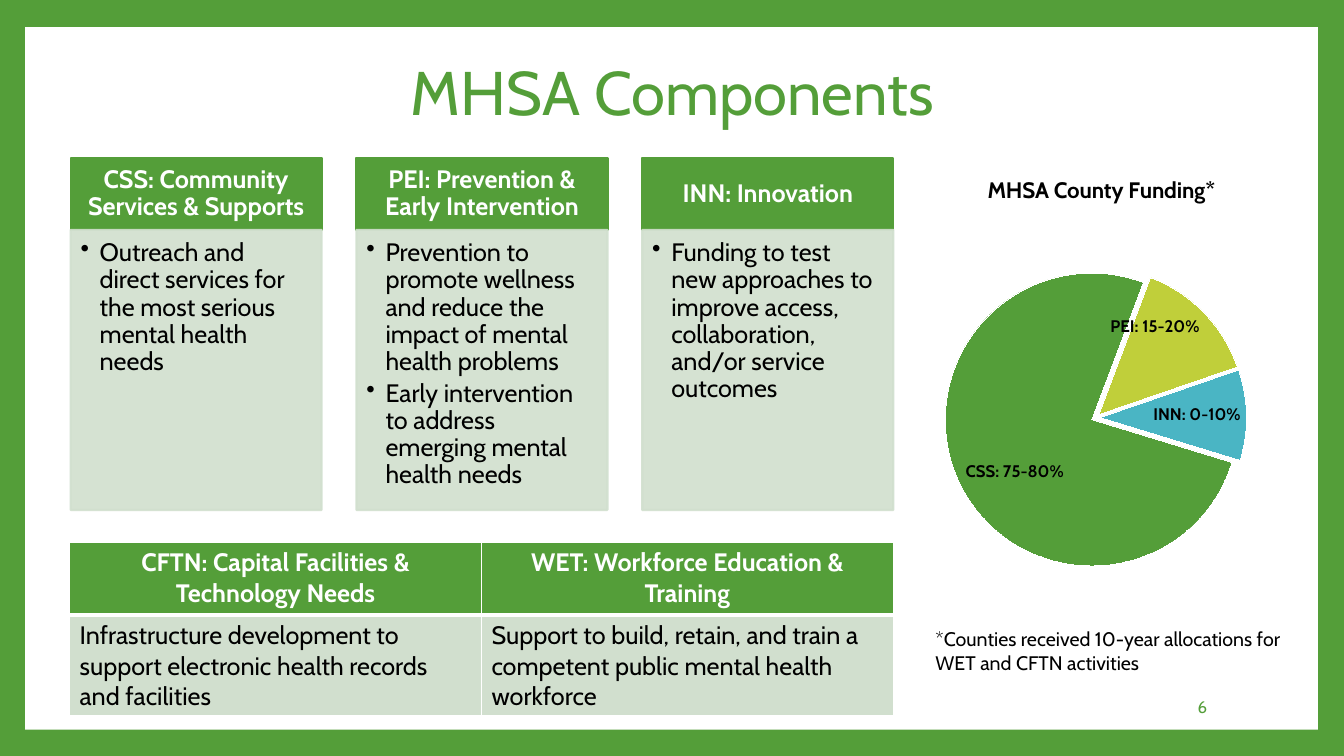
from dataclasses import dataclass

from lxml.etree import SubElement
from pptx import Presentation
from pptx.chart.data import CategoryChartData
from pptx.dml.color import RGBColor
from pptx.enum.chart import XL_CHART_TYPE, XL_LABEL_POSITION
from pptx.enum.shapes import MSO_SHAPE
from pptx.enum.text import MSO_ANCHOR, PP_ALIGN
from pptx.oxml import parse_xml
from pptx.oxml.ns import nsdecls, qn
from pptx.util import Inches, Pt


@dataclass(frozen=True)
class Theme:
    font: str = "Cabin"
    green: str = "549E39"
    pale: str = "D1DFCE"
    lime: str = "C0CF3A"
    teal: str = "4AB5C4"
    white: str = "FFFFFF"
    black: str = "000000"
    head: int = 44
    body: int = 18
    title: int = 16
    note: int = 14
    label: int = 12


THEME = Theme()
PADS = ("margin_left", "margin_top", "margin_right", "margin_bottom")
CARDS = [
    ("CSS: Community Services & Supports",
     ["Outreach and direct services for the most serious mental health needs"]),
    ("PEI: Prevention & Early Intervention",
     ["Prevention to promote wellness and reduce the impact of mental health problems",
      "Early intervention to address emerging mental health needs"]),
    ("INN: Innovation",
     ["Funding to test new approaches to improve access, collaboration, "
      "and/or service outcomes"]),
]
ROWS = [
    ["CFTN: Capital Facilities & Technology Needs",
     "WET: Workforce Education & Training"],
    ["Infrastructure development to support electronic health records and facilities",
     "Support to build, retain, and train a competent public mental health workforce"],
]
SHARES = [
    ("CSS: 75-80%", 76, THEME.green),
    ("PEI: 15-20%", 14, THEME.lime),
    ("INN: 0-10%", 10, THEME.teal),
]


def apply(item, **form):
    for key, value in form.items():
        setattr(item, key, value)


def paint(fill, color):
    fill.solid()
    fill.fore_color.rgb = RGBColor.from_string(color)


def style(font, size, color, bold=False):
    apply(font, name=THEME.font, size=Pt(size), bold=bold)
    font.color.rgb = RGBColor.from_string(color)


def write(frame, lines, size, color, bold=False, **form):
    frame.word_wrap = True
    for i, line in enumerate(lines):
        para = frame.paragraphs[0] if i == 0 else frame.add_paragraph()
        run = para.add_run()
        run.text = line
        apply(para, **form)
        style(run.font, size, color, bold)


def pad(frame, *sides):
    apply(frame, **{key: Inches(side) for key, side in zip(PADS, sides)})


def add_text(slide, area, text, size, color, anchor=MSO_ANCHOR.TOP, **form):
    box = slide.shapes.add_textbox(*map(Inches, area))
    box.text_frame.vertical_anchor = anchor
    write(box.text_frame, [text], size, color, **form)


def add_box(slide, area, color, edge=True):
    box = slide.shapes.add_shape(MSO_SHAPE.RECTANGLE, *map(Inches, area))
    box.shadow.inherit = False
    paint(box.fill, color)
    if edge:
        paint(box.line.fill, color)
        box.line.width = Pt(1.5)
    else:
        box.line.fill.background()
    return box


def add_card(slide, left, name, points):
    head = add_box(slide, (left, 1.57, 2.49, 0.71), THEME.green).text_frame
    head.vertical_anchor = MSO_ANCHOR.MIDDLE
    pad(head, 0.14, 0.08, 0.14, 0.08)
    write(head, [name], THEME.body, THEME.white, True,
          alignment=PP_ALIGN.CENTER, line_spacing=0.9)

    box = add_box(slide, (left, 2.28, 2.49, 2.78), THEME.pale)
    for tint in box._element.spPr.iter(qn("a:srgbClr")):
        SubElement(tint, qn("a:alpha"), val="90000")
    body = box.text_frame
    body.vertical_anchor = MSO_ANCHOR.TOP
    pad(body, 0.1, 0.1, 0.14, 0.16)
    write(body, points, THEME.body, THEME.black,
          alignment=PP_ALIGN.LEFT, line_spacing=0.9, space_after=Pt(3))
    for para in body.paragraphs:
        props = para._p.get_or_add_pPr()
        props.set("marL", str(Inches(0.19)))
        props.set("indent", str(-Inches(0.19)))
        SubElement(props, qn("a:buChar"), char="•")


def add_edges(cell, base):
    props = cell._tc.get_or_add_tcPr()
    for i, side in enumerate(("lnL", "lnR", "lnT", "lnB")):
        width = Pt(base if side == "lnB" else 1)
        props.insert(i, parse_xml(
            f'<a:{side} {nsdecls("a")} w="{width}"><a:solidFill>'
            f'<a:srgbClr val="{THEME.white}"/></a:solidFill></a:{side}>'))


def add_grid(slide):
    area = map(Inches, (0.69, 5.38, 8.17, 1.72))
    table = slide.shapes.add_table(len(ROWS), len(ROWS[0]), *area).table
    looks = [
        (0.72, THEME.green, THEME.white, True, PP_ALIGN.CENTER, 3),
        (1.0, THEME.pale, THEME.black, False, PP_ALIGN.LEFT, 1),
    ]
    for r, (texts, look) in enumerate(zip(ROWS, looks)):
        height, fill, color, bold, align, base = look
        table.rows[r].height = Inches(height)
        for c, text in enumerate(texts):
            cell = table.cell(r, c)
            paint(cell.fill, fill)
            write(cell.text_frame, [text], THEME.body, color, bold, alignment=align)
            add_edges(cell, base)


def set_plot(chart, left, top, width, height):
    area = chart._chartSpace.chart.plotArea
    for old in area.findall(qn("c:layout")):
        area.remove(old)
    frame = SubElement(area, qn("c:layout"))
    area.insert(0, frame)
    frame = SubElement(frame, qn("c:manualLayout"))
    for key, value in (("layoutTarget", "inner"), ("xMode", "edge"), ("yMode", "edge"),
                       ("x", left), ("y", top), ("w", width), ("h", height)):
        SubElement(frame, qn(f"c:{key}"), val=str(value))


def add_pie(slide):
    data = CategoryChartData()
    data.categories = [name for name, _, _ in SHARES]
    data.add_series("Series 1", [value for _, value, _ in SHARES])
    area = map(Inches, (9.03, 1.55, 3.79, 4.76))
    chart = slide.shapes.add_chart(XL_CHART_TYPE.PIE, *area, data).chart
    chart.has_legend = False
    style(chart.font, THEME.label, THEME.black)
    write(chart.chart_title.text_frame, ["MHSA County Funding*"],
          THEME.title, THEME.black, True)

    plot = chart.plots[0]
    apply(plot, vary_by_categories=True, has_data_labels=True)
    labels = plot.data_labels
    apply(labels, show_category_name=True, show_percentage=False,
          show_value=False, position=XL_LABEL_POSITION.INSIDE_END)
    style(labels.font, THEME.label, THEME.black, True)

    series = plot.series[0]
    for i, (_, _, color) in enumerate(SHARES):
        part = series.points[i].format
        paint(part.fill, color)
        paint(part.line.fill, THEME.white)
    burst = SubElement(series._element, qn("c:explosion"), val="3")
    series._element.find(qn("c:tx")).addnext(burst)
    pie = chart._chartSpace.chart.plotArea.find(qn("c:pieChart"))
    for old in pie.findall(qn("c:firstSliceAng")):
        pie.remove(old)
    SubElement(pie, qn("c:firstSliceAng"), val="107")
    set_plot(chart, 0.09, 0.23, 0.79, 0.63)


def main():
    deck = Presentation()
    apply(deck, slide_width=Inches(13.33), slide_height=Inches(7.5))
    slide = deck.slides.add_slide(deck.slide_layouts[6])
    paint(slide.background.fill, THEME.green)
    add_box(slide, (0.25, 0.27, 12.82, 6.97), THEME.white, edge=False)
    add_text(slide, (1.27, 0.34, 10.8, 1.22), "MHSA Components", THEME.head,
             THEME.green, MSO_ANCHOR.MIDDLE, alignment=PP_ALIGN.CENTER, line_spacing=0.9)
    for i, (name, points) in enumerate(CARDS):
        add_card(slide, 0.7 + i * 2.835, name, points)
    add_text(slide, (10.2, 6.81, 1.87, 0.4), "6", THEME.label, THEME.green,
             MSO_ANCHOR.MIDDLE, alignment=PP_ALIGN.RIGHT)
    add_pie(slide)
    add_text(slide, (9.18, 6.17, 3.63, 0.79),
             "*Counties received 10-year allocations for WET and CFTN activities",
             THEME.note, THEME.black)
    add_grid(slide)
    deck.save("out.pptx")


if __name__ == "__main__":
    main()
